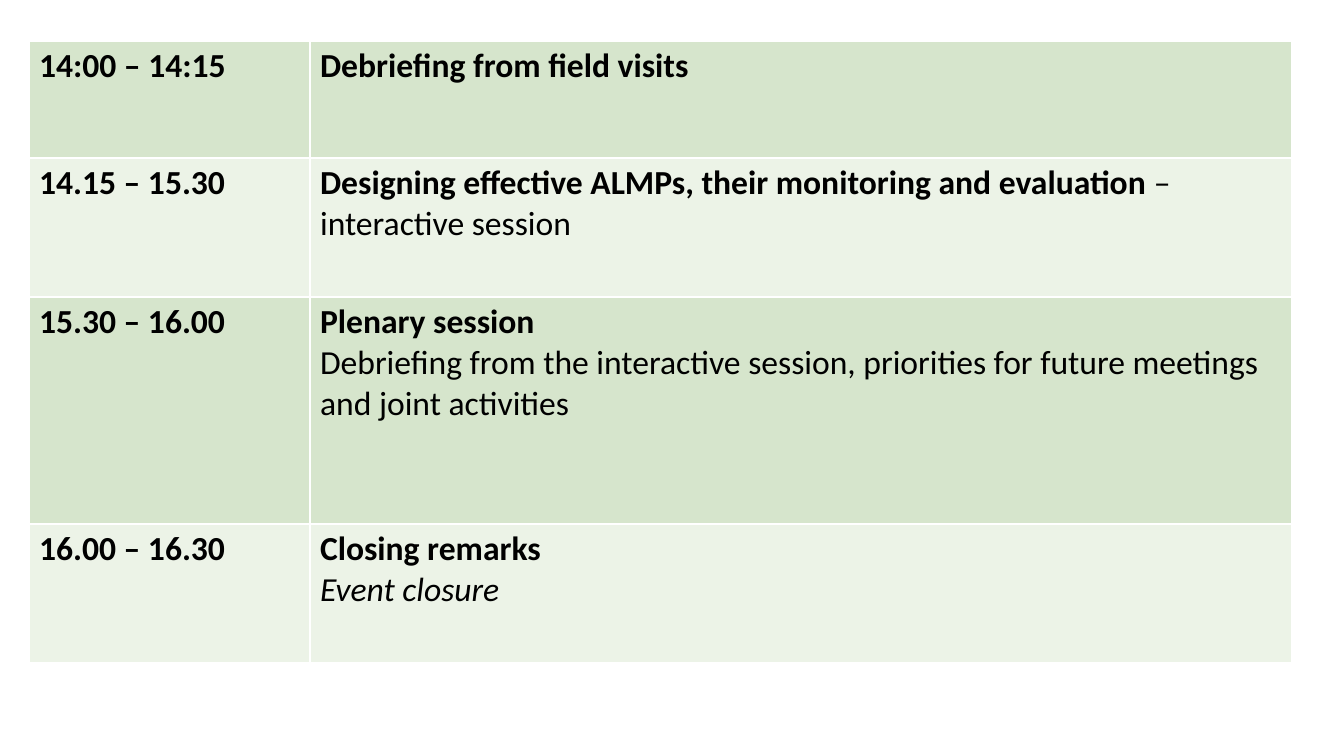
from dataclasses import dataclass

from lxml.etree import SubElement
from pptx import Presentation
from pptx.dml.color import RGBColor
from pptx.oxml.ns import qn
from pptx.util import Pt

# Content: (time, paragraphs), each paragraph a list of (text, style) runs
AGENDA = [
    ("14:00 – 14:15", [[("Debriefing from field visits", "bold")]]),
    ("14.15 – 15.30", [[
        ("Designing effective ALMPs, their monitoring and evaluation ", "bold"),
        ("– interactive session", "plain"),
    ]]),
    ("15.30 – 16.00", [
        [("Plenary session", "bold")],
        [("Debriefing from the interactive session, priorities for future "
          "meetings and joint activities", "plain")],
    ]),
    ("16.00 – 16.30", [
        [("Closing remarks", "bold")],
        [("Event closure", "italic")],
    ]),
]

# Layout in px
EMU_PER_PX = 914400 / 100.8
SLIDE_SIZE = (1344, 756)
TABLE_LEFT, TABLE_TOP = 29, 41
COLUMN_WIDTHS = (281, 982)
ROW_HEIGHTS = (117, 139, 227, 139)


@dataclass(frozen=True)
class Theme:
    font: str = "Calibri"
    size: int = 24
    text: str = "000000"
    bands: tuple = ("D6E5CC", "ECF3E7")
    border: str = "FFFFFF"
    border_width: int = 1


THEME = Theme()


def px(length):
    return round(length * EMU_PER_PX)


def add_text(paragraph, text, bold=False, italic=False):
    run = paragraph.add_run()
    run.text = text
    font = run.font
    font.name, font.size = THEME.font, Pt(THEME.size)
    font.bold, font.italic = bold, italic
    font.color.rgb = RGBColor.from_string(THEME.text)


def set_borders(cell):
    properties = cell._tc.get_or_add_tcPr()
    for side in ("a:lnL", "a:lnR", "a:lnT", "a:lnB"):
        line = SubElement(properties, qn(side), w=str(Pt(THEME.border_width)))
        fill = SubElement(line, qn("a:solidFill"))
        SubElement(fill, qn("a:srgbClr"), val=THEME.border)


def fill_cell(cell, paragraphs, color):
    set_borders(cell)
    cell.fill.solid()
    cell.fill.fore_color.rgb = RGBColor.from_string(color)
    frame = cell.text_frame
    for index, runs in enumerate(paragraphs):
        paragraph = frame.add_paragraph() if index else frame.paragraphs[0]
        for text, style in runs:
            add_text(paragraph, text, bold=style == "bold", italic=style == "italic")


def main():
    presentation = Presentation()
    presentation.slide_width, presentation.slide_height = map(px, SLIDE_SIZE)
    slide = presentation.slides.add_slide(presentation.slide_layouts[6])

    # Agenda table
    table = slide.shapes.add_table(
        len(AGENDA), len(COLUMN_WIDTHS), px(TABLE_LEFT), px(TABLE_TOP),
        px(sum(COLUMN_WIDTHS)), px(sum(ROW_HEIGHTS))).table
    table.first_row = table.horz_banding = False
    for column, width in zip(table.columns, COLUMN_WIDTHS):
        column.width = px(width)

    # Rows in alternating bands
    for index, (time, paragraphs) in enumerate(AGENDA):
        table.rows[index].height = px(ROW_HEIGHTS[index])
        color = THEME.bands[index % len(THEME.bands)]
        fill_cell(table.cell(index, 0), [[(time, "bold")]], color)
        fill_cell(table.cell(index, 1), paragraphs, color)

    presentation.save("out.pptx")


if __name__ == "__main__":
    main()
